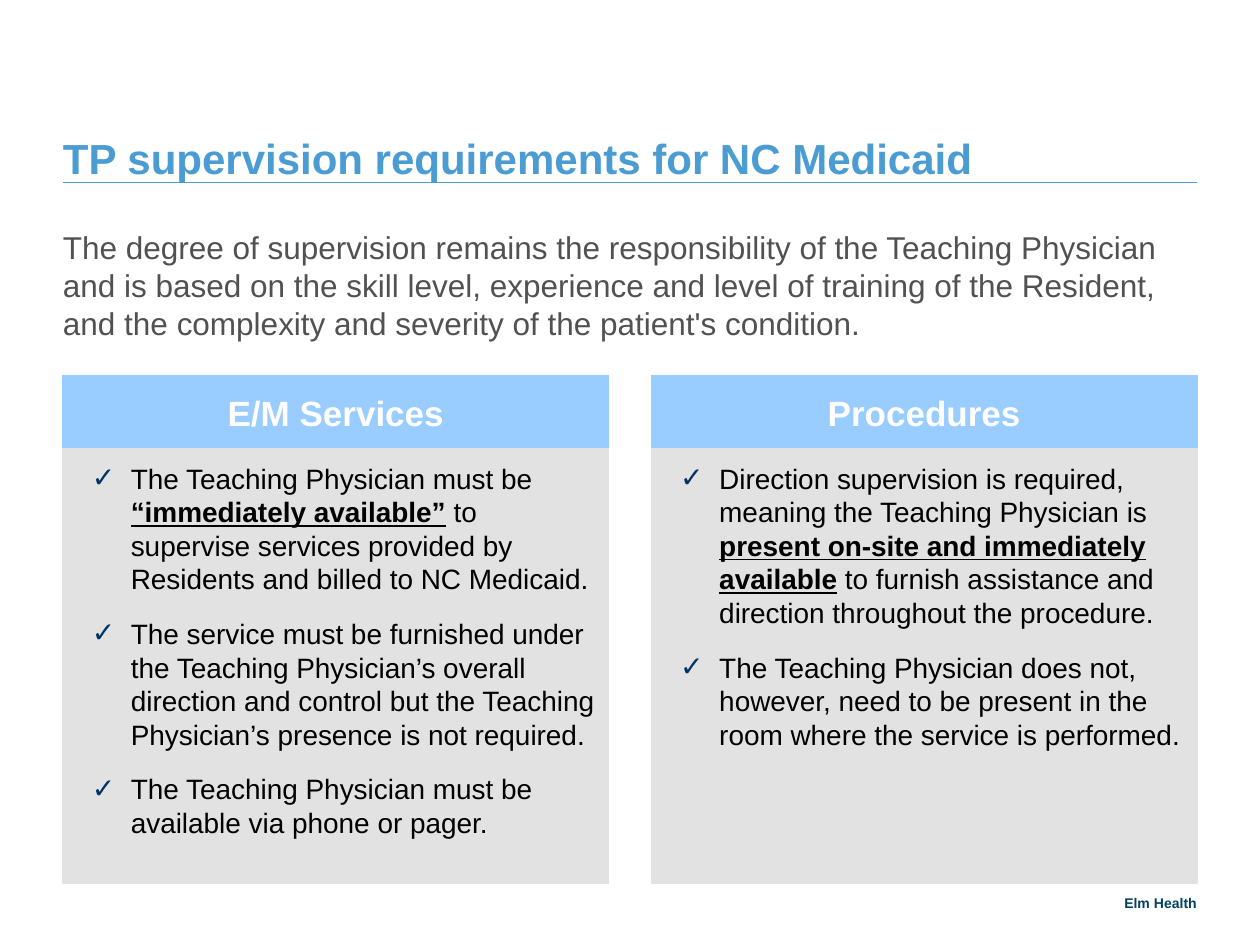
import pptx
import pptx.util
import pptx.dml.color
import pptx.enum.shapes
import pptx.enum.text
import pptx.oxml.ns
from dataclasses import dataclass
from lxml import etree

Pt = pptx.util.Pt
ALIGN = pptx.enum.text.PP_ALIGN
ANCHOR = pptx.enum.text.MSO_ANCHOR


@dataclass(frozen=True)
class Theme:
    font: str = "Arial"
    accent: str = "4B9CD3"
    footer: str = "004163"
    intro: str = "515151"
    header: str = "99CCFF"
    panel: str = "E2E2E2"
    body: str = "000000"
    check: str = "003366"
    white: str = "FFFFFF"
    title_size: int = 24
    header_size: int = 20
    intro_size: int = 18
    body_size: int = 16
    footer_size: int = 8


def rgb(value):
    return pptx.dml.color.RGBColor.from_string(value)


def apply(target, values):
    for name, value in values.items():
        setattr(target, name, value)


class Deck:
    """Places elements on a grid of 100 columns by 75 rows."""
    COLUMNS, ROWS = 100, 75

    def __init__(self, theme):
        self.theme = theme
        self.file = pptx.Presentation()
        apply(self.file, {"slide_width": pptx.util.Inches(10),
                          "slide_height": pptx.util.Inches(7.5)})
        self.slide = self.file.slides.add_slide(self.file.slide_layouts[6])

    def x(self, columns):
        return round(self.file.slide_width * columns / self.COLUMNS)

    def y(self, rows):
        return round(self.file.slide_height * rows / self.ROWS)

    def box(self, area):
        left, top, width, height = area
        return self.x(left), self.y(top), self.x(width), self.y(height)

    def frame(self, shape, insets, anchor):
        left, top, right, bottom = insets
        apply(shape.text_frame, {
            "word_wrap": True, "vertical_anchor": anchor,
            "margin_left": self.x(left), "margin_top": self.y(top),
            "margin_right": self.x(right), "margin_bottom": self.y(bottom)})
        return shape.text_frame

    def add_words(self, paragraph, text, size, color, layout, **style):
        apply(paragraph, layout)
        run = paragraph.add_run()
        run.text = text
        apply(run.font, {"name": self.theme.font, "size": Pt(size), **style})
        run.font.color.rgb = rgb(color)

    def text(self, area, text, size, color, insets=(0, 0, 0, 0),
             anchor=ANCHOR.TOP, bold=False, **layout):
        frame = self.frame(self.slide.shapes.add_textbox(*self.box(area)), insets, anchor)
        self.add_words(frame.paragraphs[0], text, size, color, layout, bold=bold)

    def rule(self, left, right, row):
        line = self.slide.shapes.add_connector(
            pptx.enum.shapes.MSO_CONNECTOR.STRAIGHT,
            self.x(left), self.y(row), self.x(right), self.y(row))
        line.line.color.rgb = rgb(self.theme.accent)
        line.line.width = Pt(0.5)
        etree.SubElement(line._element.spPr, pptx.oxml.ns.qn("a:effectLst"))

    def panel(self, area, color, anchor):
        panel = self.slide.shapes.add_shape(
            pptx.enum.shapes.MSO_SHAPE.RECTANGLE, *self.box(area))
        panel.shadow.inherit = False
        panel.fill.solid()
        panel.fill.fore_color.rgb = rgb(color)
        panel.line.color.rgb = rgb(color)
        panel.line.width = Pt(0.75)
        return self.frame(panel, (1, 1, 1, 1), anchor)

    def header(self, area, heading):
        frame = self.panel(area, self.theme.header, ANCHOR.MIDDLE)
        self.add_words(frame.paragraphs[0], heading, self.theme.header_size,
                       self.theme.white, {"alignment": ALIGN.CENTER}, bold=True)

    def checklist(self, area, items):
        frame = self.panel(area, self.theme.panel, ANCHOR.TOP)
        layout = {"level": 1, "alignment": ALIGN.LEFT,
                  "space_before": Pt(6), "space_after": Pt(6)}
        for index, item in enumerate(items):
            paragraph = frame.add_paragraph() if index else frame.paragraphs[0]
            # Every second part of an item is emphasised
            for part, words in enumerate(item):
                strong = part % 2 == 1
                self.add_words(paragraph, words, self.theme.body_size, self.theme.body,
                               layout, bold=strong, underline=strong)
            self.check(paragraph)

    def check(self, paragraph):
        qn = pptx.oxml.ns.qn
        props = paragraph._p.get_or_add_pPr()
        props.set("marL", str(self.x(4.4)))
        props.set("indent", str(-self.x(3.1)))
        tint = etree.SubElement(props, qn("a:buClr"))
        etree.SubElement(tint, qn("a:srgbClr"), val=self.theme.check)
        etree.SubElement(props, qn("a:buFont"), typeface=self.theme.font)
        etree.SubElement(props, qn("a:buChar"), char="✓")


MARGIN, CONTENT, COLUMN = 5, 90, 43.3
HEADER_TOP, HEADER_ROWS, LIST_ROWS = 29.8, 5.8, 34.5

SERVICES = [
    ["The Teaching Physician must be ", "“immediately available”",
     " to supervise services provided by Residents and billed to NC Medicaid."],
    ["The service must be furnished under the Teaching Physician’s overall direction "
     "and control but the Teaching Physician’s presence is not required."],
    ["The Teaching Physician must be available via phone or pager."],
]
PROCEDURES = [
    ["Direction supervision is required, meaning the Teaching Physician is ",
     "present on-site and immediately available",
     " to furnish assistance and direction throughout the procedure."],
    ["The Teaching Physician does not, however, need to be present in the room "
     "where the service is performed."],
]


def main():
    theme = Theme()
    deck = Deck(theme)

    # Footer and title rule
    deck.text((82.7, 70, 12.3, 2.3), "Elm Health", theme.footer_size, theme.footer,
              anchor=ANCHOR.BOTTOM, bold=True, alignment=ALIGN.RIGHT)
    deck.rule(MARGIN, MARGIN + CONTENT, 14.5)

    # Title and introduction
    deck.text((MARGIN, 3.8, CONTENT, 7.9), "TP supervision requirements for NC Medicaid",
              theme.title_size, theme.accent, insets=(0, 9.5, 15, 0),
              anchor=ANCHOR.BOTTOM, bold=True, line_spacing=Pt(28))
    deck.text((MARGIN, 17.3, CONTENT, 51.1),
              "The degree of supervision remains the responsibility of the Teaching "
              "Physician and is based on the skill level, experience and level of training "
              "of the Resident, and the complexity and severity of the patient's condition.",
              theme.intro_size, theme.intro, insets=(0, 0.8, 0, 0), space_after=Pt(9))

    # Two columns, aligned to the outer margins
    columns = [("E/M Services", SERVICES), ("Procedures", PROCEDURES)]
    for index, (heading, items) in enumerate(columns):
        left = MARGIN + index * (CONTENT - COLUMN)
        deck.header((left, HEADER_TOP, COLUMN, HEADER_ROWS), heading)
        deck.checklist((left, HEADER_TOP + HEADER_ROWS, COLUMN, LIST_ROWS), items)

    deck.file.save("out.pptx")


if __name__ == "__main__":
    main()
